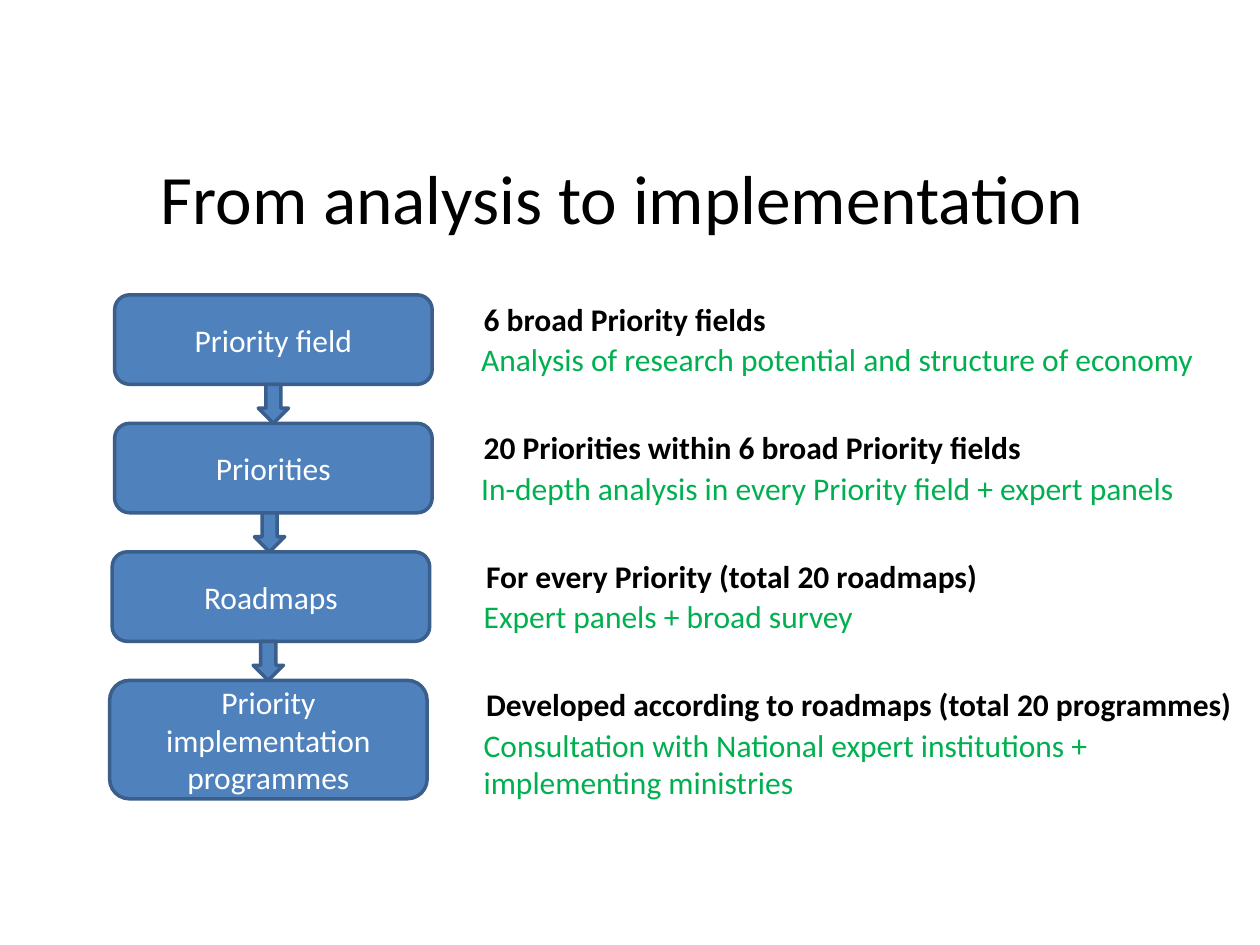
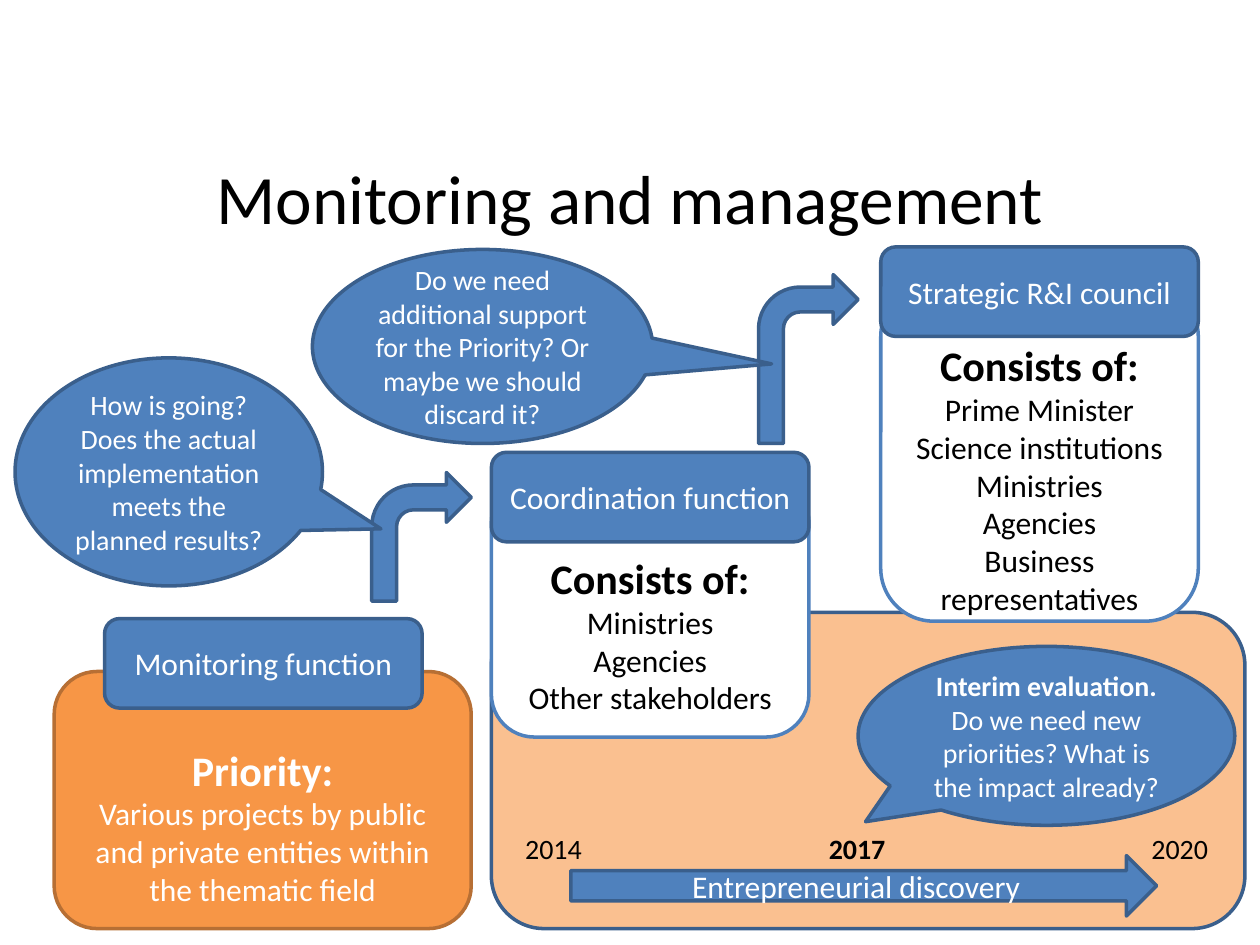
from dataclasses import dataclass
from pptx import Presentation
from pptx.dml.color import RGBColor
from pptx.enum.shapes import MSO_SHAPE as Kind
from pptx.enum.text import MSO_ANCHOR, MSO_AUTO_SIZE, PP_ALIGN
from pptx.util import Pt

SCALE = 9144


@dataclass(frozen=True)
class Theme:
    font: str = "Calibri"
    ink: str = "000000"
    white: str = "FFFFFF"
    green: str = "00B050"
    blue: str = "4F81BD"
    navy: str = "3A5F8C"
    orange: str = "F79646"
    rust: str = "B76F34"
    peach: str = "FAC090"
    title: float = 39.6
    head: int = 24
    body: int = 18
    small: int = 16
    edge: int = 2


THEME = Theme()


def px(*sizes):
    return [size * SCALE for size in sizes]


def write(shape, *lines, size=THEME.body, color=THEME.white, bold=False,
          align=PP_ALIGN.CENTER, anchor=MSO_ANCHOR.MIDDLE):
    frame = shape.text_frame
    frame.word_wrap = True
    frame.auto_size = MSO_AUTO_SIZE.NONE
    frame.vertical_anchor = anchor
    for index, line in enumerate(lines):
        para = frame.add_paragraph() if index else frame.paragraphs[0]
        para.alignment = align
        parts = [(line, {})] if isinstance(line, str) else line
        for text, style in parts:
            run = para.add_run()
            run.text = text
            font = run.font
            font.name = THEME.font
            font.size = Pt(style.get("size", size))
            font.bold = style.get("bold", bold)
            font.color.rgb = RGBColor.from_string(color)
    return shape


def start(deck, title):
    slide = deck.slides.add_slide(deck.slide_layouts[5])
    head = slide.shapes.title
    head.left, head.top, head.width, head.height = px(50, 118, 900, 77)
    write(head, title, size=THEME.title, color=THEME.ink)
    return slide


def draw(slide, kind, place, fill=THEME.blue, line=THEME.navy, tune=()):
    shape = slide.shapes.add_shape(kind, *px(*place))
    shape.shadow.inherit = False
    shape.fill.solid()
    shape.fill.fore_color.rgb = RGBColor.from_string(fill)
    shape.line.color.rgb = RGBColor.from_string(line)
    shape.line.width = Pt(THEME.edge)
    for index, value in enumerate(tune):
        shape.adjustments[index] = value
    return shape


def label(slide, place, text, **style):
    box = slide.shapes.add_textbox(*px(*place))
    style = {"color": THEME.ink, "align": PP_ALIGN.LEFT, "anchor": MSO_ANCHOR.TOP} | style
    return write(box, text, **style)


def block(slide, left, top, text, high=71):
    return write(draw(slide, Kind.ROUNDED_RECTANGLE, (left, top, 252, high)), text)


def panel(slide, place, head, *lines, fill=THEME.white, line=THEME.blue, color=THEME.ink):
    shape = draw(slide, Kind.ROUNDED_RECTANGLE, place, fill, line)
    shape.text_frame.margin_top = px(46)[0]
    write(shape, [(head, {"size": THEME.head, "bold": True})], *lines, color=color)


def bubble(slide, place, tip, line):
    shape = draw(slide, Kind.OVAL_CALLOUT, place, tune=tip)
    write(shape, line, size=THEME.small)


def show_steps(deck):
    slide = start(deck, "From analysis to implementation ")
    steps = [
        (91, 71, 374, "Priority field", "6 broad Priority fields",
         "Analysis of research potential and structure of economy"),
        (91, 71, 374, "Priorities", "20 Priorities within 6 broad Priority fields",
         "In-depth analysis in every Priority field + expert panels"),
        (89, 71, 376, "Roadmaps", "For every Priority (total 20 roadmaps)",
         "Expert panels + broad survey"),
        (87, 94, 376, "Priority implementation programmes",
         "Developed according to roadmaps (total 20 programmes)",
         "Consultation with National expert institutions + implementing ministries"),
    ]
    pitch = 102
    for row, (left, high, side, name, head, note) in enumerate(steps):
        drop = row * pitch
        block(slide, left, 234 + drop, name, high)
        label(slide, (side, 233 + drop, 624, 40), head, bold=True)
        label(slide, (side - 2, 265 + drop, 609, high - 23 if high > 71 else 40),
              note, color=THEME.green)
    for row, left in enumerate((205, 202, 201)):
        draw(slide, Kind.DOWN_ARROW, (left, 305 + row * pitch, 24, 31))


def show_roles(deck):
    slide = start(deck, "Monitoring and management")
    draw(slide, Kind.ROUNDED_RECTANGLE, (390, 486, 598, 251), THEME.peach)
    panel(slide, (699, 225, 252, 268), "Consists of:", "Prime Minister",
          "Science institutions", "Ministries", "Agencies", "Business representatives")
    panel(slide, (390, 381, 252, 204), "Consists of:", "Ministries", "Agencies",
          "Other stakeholders")
    panel(slide, (43, 533, 331, 204), "Priority:",
          "Various projects by public and private entities within the thematic field",
          fill=THEME.orange, line=THEME.rust, color=THEME.white)
    for left, top, name in ((699, 196, "Strategic R&I council"),
                            (390, 359, "Coordination function"),
                            (83, 491, "Monitoring function")):
        block(slide, left, top, name)
    for place in ((295, 375, 79, 102), (602, 218, 79, 134)):
        draw(slide, Kind.BENT_ARROW, place, tune=(0.25, 0.25, 0.25, 0.42))
    bubble(slide, (12, 284, 244, 181), (0.69, 0.25),
           "How is going? Does the actual implementation meets the planned results?")
    bubble(slide, (248, 198, 270, 154), (0.85, 0.09),
           "Do we need additional support for the Priority? Or maybe we should discard it?")
    for left, year in ((407, "2014"), (648, "2017"), (904, "2020")):
        label(slide, (left, 655, 67, 37), year, size=THEME.small, bold=year == "2017")
    bubble(slide, (681, 513, 299, 142), (-0.48, 0.48),
           [("Interim evaluation. ", {"bold": True}),
            ("Do we need new priorities? What is the impact already?", {})])
    write(draw(slide, Kind.RIGHT_ARROW, (453, 679, 465, 48)), "Entrepreneurial discovery")


def main():
    deck = Presentation()
    deck.slide_width, deck.slide_height = px(1000, 750)
    show_steps(deck)
    show_roles(deck)
    deck.save("out.pptx")


if __name__ == "__main__":
    main()
